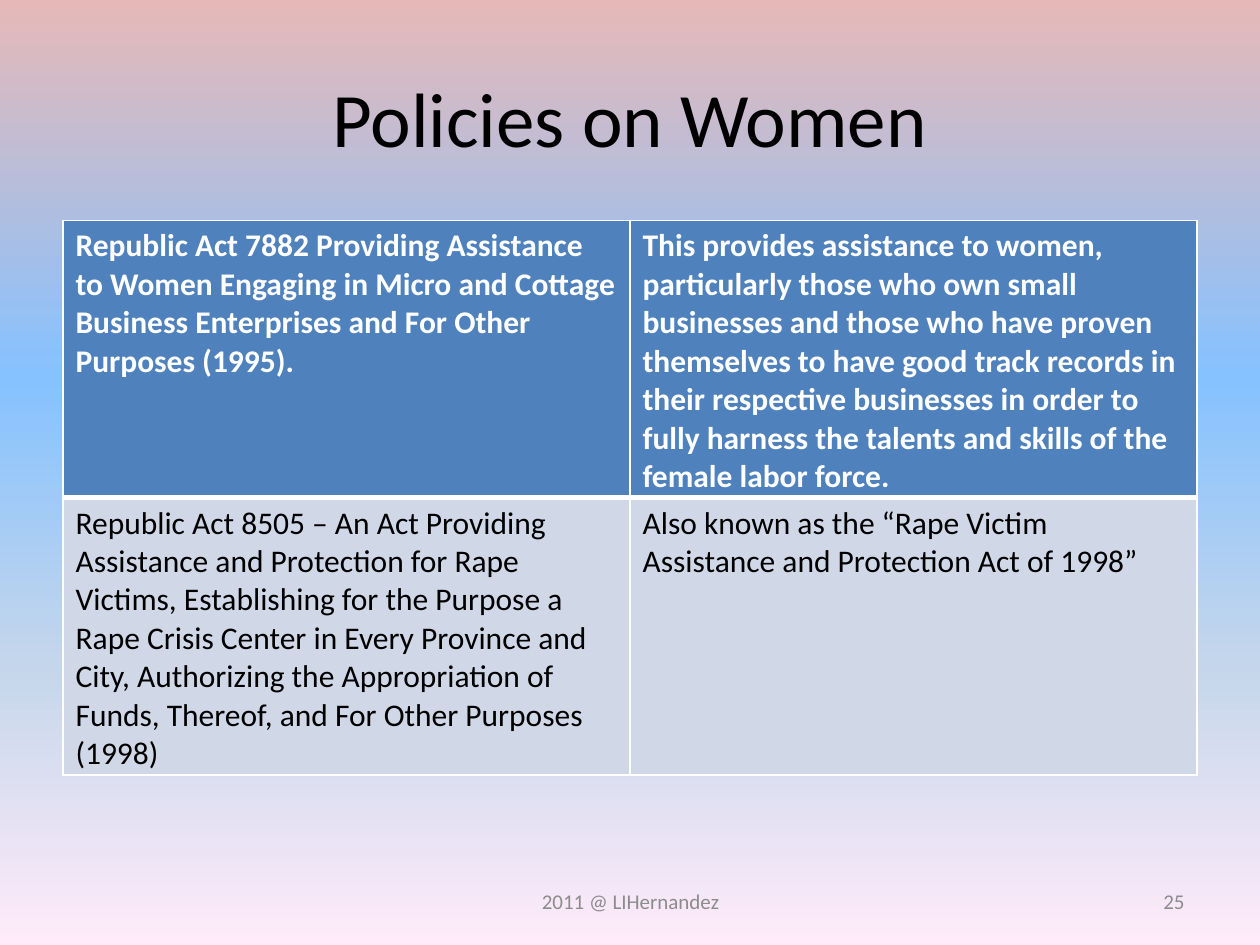
import pptx
import pptx.dml.color
import pptx.enum.text
import pptx.oxml
import pptx.oxml.ns
import pptx.util
from lxml import etree

Inches = pptx.util.Inches
Pt = pptx.util.Pt
RGBColor = pptx.dml.color.RGBColor
PP_ALIGN = pptx.enum.text.PP_ALIGN
qn = pptx.oxml.ns.qn

BLACK = RGBColor(0x00, 0x00, 0x00)
WHITE = RGBColor(0xFF, 0xFF, 0xFF)
GRAY = RGBColor(0x8C, 0x8C, 0x8C)
BLUE = RGBColor(0x4F, 0x81, 0xBD)
PALE_BLUE = RGBColor(0xD0, 0xD8, 0xE8)
SKY = [
    (0, RGBColor(0xE6, 0xB9, 0xB8)),
    (40, RGBColor(0x85, 0xC2, 0xFF)),
    (70, RGBColor(0xC4, 0xD6, 0xEB)),
    (100, RGBColor(0xFF, 0xEB, 0xFA)),
]

POLICIES = [
    (
        "Republic Act 7882 Providing Assistance to Women Engaging in Micro and "
        "Cottage Business Enterprises and For Other Purposes (1995).",
        "This provides assistance to women, particularly those who own small "
        "businesses and those who have proven themselves to have good track "
        "records in their respective businesses in order to fully harness the "
        "talents and skills of the female labor force.",
    ),
    (
        "Republic Act 8505 – An Act Providing Assistance and Protection for Rape "
        "Victims, Establishing for the Purpose a Rape Crisis Center in Every "
        "Province and City, Authorizing the Appropriation of Funds, Thereof, "
        "and For Other Purposes (1998)",
        "Also known as the “Rape Victim Assistance and Protection Act of 1998”",
    ),
]


def write(tf, text, font="Calibri", size=18, color=BLACK, bold=False, align=PP_ALIGN.LEFT):
    p = tf.paragraphs[0]
    p.alignment = align
    r = p.add_run()
    r.text = text
    r.font.name = font
    r.font.size = Pt(size)
    r.font.bold = bold
    r.font.color.rgb = color


def add_color(parent, color):
    etree.SubElement(parent, qn("a:srgbClr"), val=str(color))


class Deck:
    def __init__(self, font):
        self.font = font
        self.prs = pptx.Presentation()
        self.prs.slide_width = Inches(10)
        self.prs.slide_height = Inches(7.5)
        self.slide = self.prs.slides.add_slide(self.prs.slide_layouts[6])

    def background(self, stops):
        fill = self.slide.background.fill
        fill.gradient()
        grad = self.slide.element.find(".//" + qn("a:gradFill"))
        gs_list = grad.find(qn("a:gsLst"))
        for gs in list(gs_list):
            gs_list.remove(gs)
        for position, color in stops:
            gs = etree.SubElement(gs_list, qn("a:gs"), pos=str(position * 1000))
            add_color(gs, color)
        grad.find(qn("a:lin")).set("ang", str(90 * 60000))

    def text(self, text, left, top, width, height, **fmt):
        sp = self.slide.shapes.add_textbox(*map(Inches, (left, top, width, height)))
        tf = sp.text_frame
        tf.word_wrap = True
        tf.vertical_anchor = pptx.enum.text.MSO_ANCHOR.MIDDLE
        write(tf, text, font=self.font, **fmt)

    def borders(self, cell, **widths):
        tc_pr = cell._tc.get_or_add_tcPr()
        for side in "LRTB":
            width = Pt(widths.get(side, 1))
            ln = etree.SubElement(tc_pr, qn("a:ln" + side), w=str(width))
            add_color(etree.SubElement(ln, qn("a:solidFill")), WHITE)

    def table(self, rows, left, top, width, height):
        shape = self.slide.shapes.add_table(
            len(rows), len(rows[0]), *map(Inches, (left, top, width, height))
        )
        for i, row in enumerate(rows):
            header = i == 0
            for j, text in enumerate(row):
                cell = shape.table.cell(i, j)
                self.borders(cell, **({"B": 3} if header else {"T": 3}))
                cell.fill.solid()
                cell.fill.fore_color.rgb = BLUE if header else PALE_BLUE
                write(cell.text_frame, text, font=self.font, bold=header,
                      color=WHITE if header else BLACK)


def main():
    deck = Deck("Calibri")
    deck.background(SKY)
    deck.text("Policies on Women", 0.5, 0.3, 9, 1.25, size=44, align=PP_ALIGN.CENTER)
    deck.table(POLICIES, 0.5, 1.75, 9, 4.4)
    footer = {"size": 12, "color": GRAY}
    deck.text("2011 @ LIHernandez", 3.42, 6.95, 3.17, 0.4, align=PP_ALIGN.CENTER, **footer)
    deck.text("25", 7.17, 6.95, 2.33, 0.4, align=PP_ALIGN.RIGHT, **footer)
    deck.prs.save("out.pptx")


if __name__ == "__main__":
    main()
